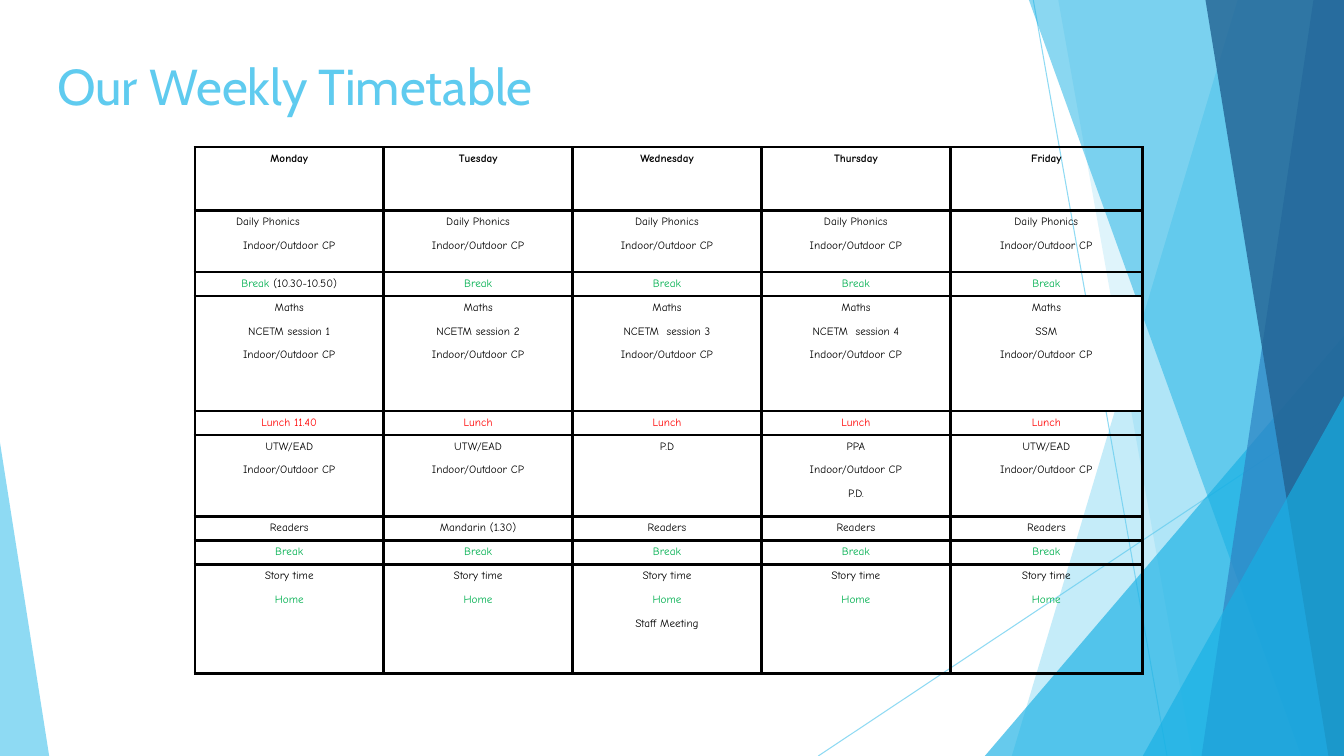
from lxml.etree import SubElement
from pptx import Presentation
from pptx.dml.color import RGBColor
from pptx.enum.shapes import MSO_CONNECTOR, MSO_SHAPE
from pptx.enum.text import MSO_ANCHOR, PP_ALIGN
from pptx.oxml.ns import qn
from pptx.util import Cm, Pt

SKY = RGBColor(0x5F, 0xCB, 0xEF)
CYAN = RGBColor(0x17, 0xB0, 0xE4)
BLUE = RGBColor(0x2E, 0x83, 0xC3)
NAVY = RGBColor(0x22, 0x62, 0x92)
GREEN = RGBColor(0x00, 0xB0, 0x50)
RED = RGBColor(0xFF, 0x00, 0x00)
BLACK = RGBColor(0x00, 0x00, 0x00)
WHITE = RGBColor(0xFF, 0xFF, 0xFF)
WIDE, HIGH = 33.87, 19.05


def fade(shape, alpha):
    """Set the opacity, in percent, of the first colour in a shape."""
    color = next(shape._element.iter(qn("a:srgbClr")))
    SubElement(color, qn("a:alpha")).set("val", str(alpha * 1000))


def put(para, text, font, size, color, bold=False):
    """Add one styled run to a paragraph."""
    run = para.add_run()
    run.text = text
    run.font.name, run.font.size = font, Pt(size)
    run.font.color.rgb, run.font.bold = color, bold


deck = Presentation()
deck.slide_width, deck.slide_height = Cm(WIDE), Cm(HIGH)
slide = deck.slides.add_slide(deck.slide_layouts[6])
shapes = slide.shapes

# Thin diagonal lines
for ends in [(26.04, 0, 29.41, HIGH), (WIDE, 10.24, 20.62, HIGH)]:
    line = shapes.add_connector(MSO_CONNECTOR.STRAIGHT, *map(Cm, ends))
    line.line.color.rgb, line.line.width = SKY, Pt(0.75)
    SubElement(line._element.spPr, qn("a:effectLst"))
    fade(line, 70)

# Facets: a panel has its left edge's top and bottom x,
# a triangle has left, top, width, height and tip
facets = [
    ((31.19, 25.5), SKY, 36),
    ((26.67, 30.05), SKY, 20),
    ((24.82, 8.46, 9.05, 10.59, 1), CYAN, 66),
    ((25.93, 32.79), CYAN, 50),
    ((33.1, 30.28), BLUE, 70),
    ((30.38, 33.48), NAVY, 80),
    ((28.8, 9.98, 5.07, 9.07, 1), CYAN, 66),
    ((0, 11.15, 1.24, 7.9, 0), SKY, 70),
]
for form, color, alpha in facets:
    if len(form) == 2:
        top, base = form
        pen = shapes.build_freeform(Cm(top), 0)
        rest = [(WIDE, 0), (WIDE, HIGH), (base, HIGH)]
        pen.add_line_segments([(Cm(x), Cm(y)) for x, y in rest])
        facet = pen.convert_to_shape()
    else:
        *box, tip = form
        facet = shapes.add_shape(MSO_SHAPE.ISOSCELES_TRIANGLE, *map(Cm, box))
        facet.adjustments[0] = tip
    facet.shadow.inherit = False
    facet.fill.solid()
    facet.fill.fore_color.rgb = color
    facet.line.fill.background()
    fade(facet, alpha)

# Title
title = shapes.add_textbox(Cm(1.19), Cm(1.27), Cm(23.88), Cm(3.66)).text_frame
title.word_wrap = True
title.vertical_anchor = MSO_ANCHOR.TOP
put(title.paragraphs[0], "Our Weekly Timetable", "Cabin", 36, SKY)

# Timetable: lines in a cell are parted by "\n", runs in a line by "|"
play = "Indoor/Outdoor CP"
phonics = f"Daily Phonics\n{play}"
topic = f"UTW/EAD\n{play}"
story = "Story time\nHome"
maths = ["NCETM session 1", "NCETM session 2", "NCETM  session 3",
         "NCETM  session 4", "SSM"]
rows = [
    (1.59, ["Monday", "Tuesday", "Wednesday", "Thursday", "Friday"]),
    (1.56, [phonics] * 5),
    (0.6, ["Break |(10.30-10.50)"] + ["Break"] * 4),
    (2.9, [f"Maths\n{task}\n{play}" for task in maths]),
    (0.6, ["Lunch 11.40"] + ["Lunch"] * 4),
    (2.06, [topic, topic, "P.D", f"PPA\n{play}\nP.D.", topic]),
    (0.6, ["Readers", "Mandarin (1.30)"] + ["Readers"] * 3),
    (0.6, ["Break"] * 5),
    (2.75, [story, story, f"{story}\nStaff Meeting", story, story]),
]
cols = [4.76] * 4 + [4.84]
hues = {"Break": GREEN, "Home": GREEN, "Lunch": RED}

frame = shapes.add_table(len(rows), len(cols), Cm(4.91), Cm(3.71),
                         Cm(sum(cols)), Cm(sum(row[0] for row in rows)))
table = frame.table
table.first_row = table.horz_banding = False
for col, width in zip(table.columns, cols):
    col.width = Cm(width)

for r, (height, texts) in enumerate(rows):
    table.rows[r].height = Cm(height)
    for c, text in enumerate(texts):
        cell = table.cell(r, c)
        cell.margin_left = cell.margin_right = Cm(0.08)
        cell.margin_top = cell.margin_bottom = Cm(0.07)

        # Borders, then fill
        props = cell._tc.get_or_add_tcPr()
        for side in ("lnL", "lnR", "lnT", "lnB"):
            edge = SubElement(props, qn(f"a:{side}"), w=str(Pt(2)))
            paint = SubElement(edge, qn("a:solidFill"))
            SubElement(paint, qn("a:srgbClr"), val=str(BLACK))
        if text.startswith("Maths") and c == 4:
            cell.fill.solid()
            cell.fill.fore_color.rgb = WHITE
        else:
            cell.fill.background()

        # Text
        body = cell.text_frame
        for n, words in enumerate(text.split("\n")):
            para = body.add_paragraph() if n else body.paragraphs[0]
            para.alignment = PP_ALIGN.CENTER
            para.line_spacing, para.space_after = 1.19, Pt(6)
            for part in words.split("|"):
                hue = hues.get(part.split()[0], BLACK)
                put(para, part, "Comic Neue", 8, hue, bold=r == 0)

# Monday's phonics line sits left of centre
first = table.cell(1, 0).text_frame.paragraphs[0]
first.alignment = PP_ALIGN.LEFT
first._p.get_or_add_pPr().set("marL", str(Cm(0.96)))

deck.save("out.pptx")
